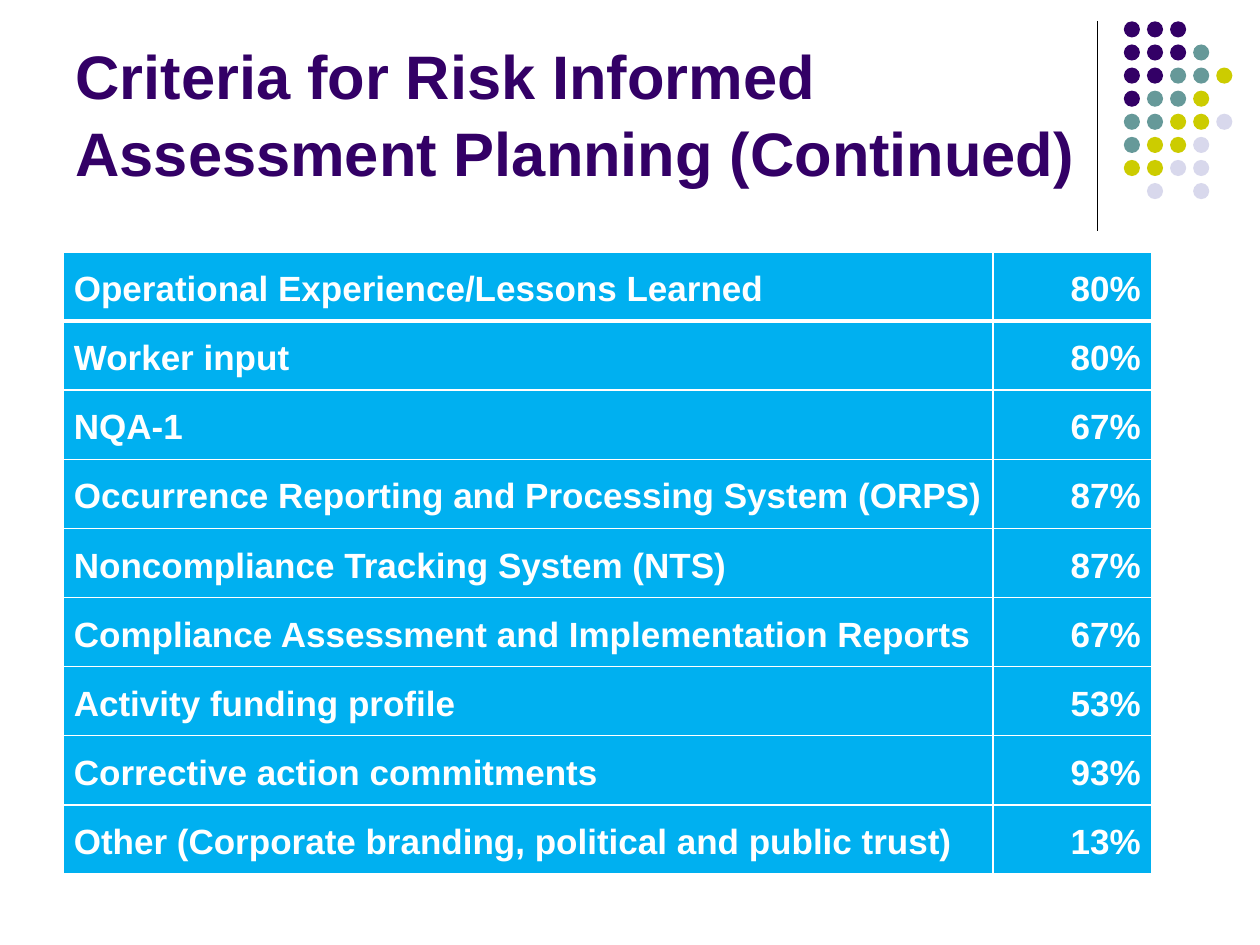
from lxml.etree import SubElement
from pptx import Presentation
from pptx.dml.color import RGBColor
from pptx.enum.shapes import MSO_CONNECTOR, MSO_SHAPE
from pptx.enum.text import MSO_ANCHOR, MSO_AUTO_SIZE, PP_ALIGN
from pptx.oxml.ns import qn
from pptx.util import Pt

TITLE = "Criteria for Risk Informed\vAssessment Planning (Continued)"
CRITERIA = [
    ("Operational Experience/Lessons Learned", "80%"),
    ("Worker input", "80%"),
    ("NQA-1", "67%"),
    ("Occurrence Reporting and Processing System (ORPS)", "87%"),
    ("Noncompliance Tracking System (NTS)", "87%"),
    ("Compliance Assessment and Implementation Reports", "67%"),
    ("Activity funding profile", "53%"),
    ("Corrective action commitments", "93%"),
    ("Other (Corporate branding, political and public trust)", "13%"),
]
DOT_ROWS = ["PPP", "PPPT", "PPTTY", "PTTY", "TTYYL", "TYYL", "YYLL", " L L"]
DOT_COLORS = {"P": "330066", "T": "669999", "Y": "CCCC00", "L": "D8D8EC"}
DOT_LEFT, DOT_TOP, DOT_PITCH, DOT_SIZE = 642.2, 12.2, 13.2, 9.2
COLUMN_WIDTHS = (531.4, 90.7)
ROW_HEIGHT = 39.5


def color(value):
    return RGBColor.from_string(value)


def format_text(frame, size, value, spacing, align):
    for para in frame.paragraphs:
        para.line_spacing = spacing
        para.alignment = align
        for span in para.runs:
            span.font.name = "Arial"
            span.font.size = Pt(size)
            span.font.bold = True
            span.font.color.rgb = color(value)


def add_title(page):
    title = page.shapes.title
    title.left, title.top, title.width, title.height = Pt(36), Pt(9.4), Pt(594), Pt(102.2)
    frame = title.text_frame
    frame.text = TITLE
    frame.word_wrap = True
    frame.auto_size = MSO_AUTO_SIZE.NONE
    frame.vertical_anchor = MSO_ANCHOR.BOTTOM
    format_text(frame, 35.1, "330066", 1.05, PP_ALIGN.LEFT)


def add_divider(page):
    line = page.shapes.add_connector(
        MSO_CONNECTOR.STRAIGHT, Pt(627), Pt(12), Pt(627), Pt(132))
    line.line.color.rgb = color("000000")
    line.line.width = Pt(0.75)
    SubElement(line._element.spPr, qn("a:effectLst"))


def add_dots(page):
    for row, codes in enumerate(DOT_ROWS):
        for column, code in enumerate(codes):
            if code == " ":
                continue
            dot = page.shapes.add_shape(
                MSO_SHAPE.OVAL,
                Pt(DOT_LEFT + column * DOT_PITCH), Pt(DOT_TOP + row * DOT_PITCH),
                Pt(DOT_SIZE), Pt(DOT_SIZE))
            dot.shadow.inherit = False
            dot.fill.solid()
            dot.fill.fore_color.rgb = color(DOT_COLORS[code])
            dot.line.fill.background()


def set_borders(cell, widths):
    properties = cell._tc.get_or_add_tcPr()
    for side, width in widths.items():
        border = SubElement(properties, qn(f"a:ln{side}"), w=str(Pt(width)))
        fill = SubElement(border, qn("a:solidFill"))
        SubElement(fill, qn("a:srgbClr"), val="FFFFFF")


def add_criteria_table(page):
    table = page.shapes.add_table(
        len(CRITERIA), len(COLUMN_WIDTHS), Pt(36), Pt(144),
        Pt(sum(COLUMN_WIDTHS)), Pt(ROW_HEIGHT * len(CRITERIA))).table
    for column, width in zip(table.columns, COLUMN_WIDTHS):
        column.width = Pt(width)
    for row_number, texts in enumerate(CRITERIA):
        table.rows[row_number].height = Pt(ROW_HEIGHT)
        top = 3 if row_number == 1 else 1
        bottom = 3 if row_number == 0 else 1
        for column_number, text in enumerate(texts):
            cell = table.cell(row_number, column_number)
            cell.text_frame.text = text
            cell.vertical_anchor = MSO_ANCHOR.MIDDLE
            cell.margin_left = cell.margin_right = Pt(6.2)
            cell.margin_top = cell.margin_bottom = Pt(3)
            align = PP_ALIGN.RIGHT if column_number else PP_ALIGN.LEFT
            format_text(cell.text_frame, 20, "FFFFFF", 1.15, align)
            set_borders(cell, {"L": 1, "R": 1, "T": top, "B": bottom})
            cell.fill.solid()
            cell.fill.fore_color.rgb = color("00B0F0")


def main():
    deck = Presentation()
    deck.slide_width, deck.slide_height = Pt(720), Pt(540)
    page = deck.slides.add_slide(deck.slide_layouts[5])
    add_divider(page)
    add_dots(page)
    add_title(page)
    add_criteria_table(page)
    deck.save("out.pptx")


if __name__ == "__main__":
    main()
